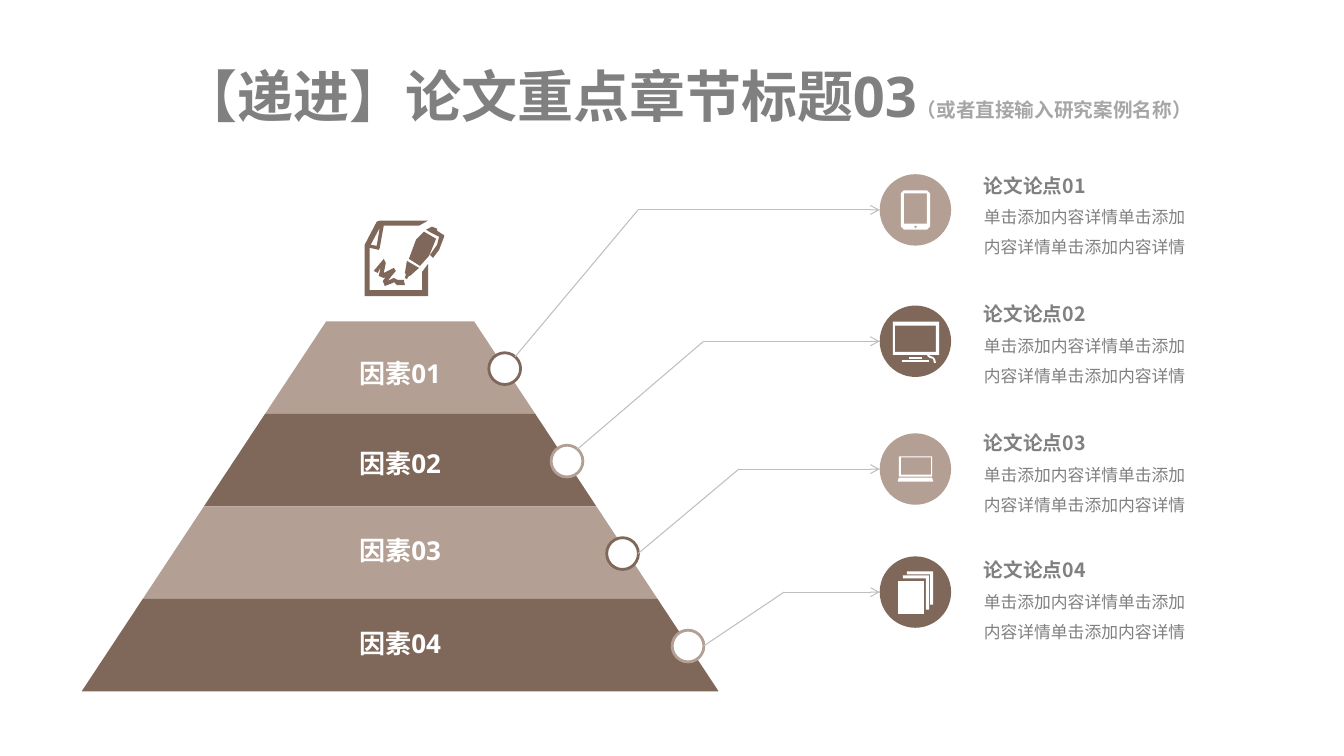
from pptx import Presentation
from pptx import util as u
from pptx.dml import color
from pptx.enum import shapes, text
from pptx.oxml import ns
from lxml import etree

Cm, Pt = u.Cm, u.Pt
COLORS = {"light": "B39F93", "dark": "7F685A", "white": "FFFFFF",
          "line": "BFBFBF", "text": "808080", "subtitle": "A6A6A6"}
LATIN, CJK = "Open Sans", "Noto Sans CJK SC"
ICON_SCALE = Cm(1.8) / 71


def rect(l, t, r, b):
    """Return the corners of a rectangular contour."""
    return [(l, t), (r, t), (r, b), (l, b)]


TABLET = [[
    [(24, 16), (47, 16), (50, 19), (50, 52), (47, 55), (24, 55), (21, 52), (21, 19)],
    rect(24, 19, 47, 49),
    [(36, 51), (37, 52), (36, 54), (34, 52)]]]
MONITOR = [
    [[(59, 49), (59, 16), (13, 16), (13, 49), (47, 49), (48, 51), (50, 52), (53, 53),
      (54, 57), (56, 57), (55, 53), (53, 51), (50, 50), (49, 49)],
     rect(15, 20, 56, 46)],
    [rect(29, 51, 42, 53)],
    [rect(22, 54, 49, 56)]]
LAPTOP = [
    [rect(19, 23, 52, 43), rect(21, 24, 51, 41)],
    [[(53, 47), (52, 44), (19, 44), (18, 47), (18, 48), (53, 48)]]]
PAPERS = [
    [[(23, 22), (46, 22), (46, 53), (49, 53), (49, 19), (23, 19)]],
    [[(27, 15), (27, 18), (50, 18), (50, 48), (53, 48), (53, 15)]],
    [rect(18, 24, 44, 57)]]
PEN_AND_PAPER = [[
    [(15, 0), (63, 0), (54, 5), (19, 5), (15, 27), (14, 29), (5, 27), (5, 69), (57, 69),
     (57, 51), (63, 43), (63, 75), (0, 75), (0, 24), (12, 1)],
    [(9, 50), (13, 52), (16, 46), (14, 55), (19, 57), (21, 56), (18, 60), (20, 65),
     (28, 62), (29, 61), (32, 64), (40, 64), (39, 59), (33, 59), (29, 57), (23, 60),
     (26, 56), (31, 50), (29, 47), (23, 50), (19, 52), (21, 42), (19, 38)],
    [(15, 7), (6, 24), (12, 25)],
    [(42, 40), (40, 52), (41, 53), (40, 57), (42, 58), (44, 55), (45, 55), (54, 47)],
    [(72, 10), (72, 8), (67, 6), (61, 9), (66, 12), (72, 15), (74, 16), (72, 24),
     (65, 34), (68, 37), (74, 29), (79, 16), (79, 14), (78, 14)],
    [(59, 11), (51, 19), (44, 38), (55, 45), (64, 35), (71, 18)]]]

LABEL_CENTERS = [9.4, 11.68, 13.87, 16.2]
LEADERS = [((12.32, 8.89), (0.66, 0.1), 16.08), ((13.89, 11.22), (0.66, 0.1), 17.73),
           ((15.29, 13.55), (0.79, 0.4), 18.62), ((16.94, 15.88), (0.79, 0.4), 19.76)]
POINTS = [(4.39, 3.96, TABLET), (7.7, 7.19, MONITOR),
          (10.92, 10.44, LAPTOP), (14.02, 13.64, PAPERS)]


def rgb(name):
    """Return a palette colour."""
    return color.RGBColor.from_string(COLORS[name])


def paint(sp, fill, line=None):
    """Give a shape a flat fill and an optional outline."""
    sp.shadow.inherit = False
    sp.fill.solid()
    sp.fill.fore_color.rgb = rgb(fill)
    if line:
        sp.line.color.rgb = rgb(line)
        sp.line.width = Pt(2)
    else:
        sp.line.fill.background()


def style_run(r, size, fill, bold=True, font=LATIN):
    """Format a run for Latin and Chinese text."""
    r.font.name, r.font.size, r.font.bold = font, Pt(size), bold
    r.font.color.rgb = rgb(fill)
    etree.SubElement(r._r.rPr, ns.qn("a:ea")).set("typeface", CJK)


def add_outline(parent, x, y, contours, scale, fill):
    """Draw closed contours as one freeform at a position in cm."""
    first, *others = contours
    fb = parent.build_freeform(*first[0], scale=scale)
    fb.add_line_segments(first[1:], close=True)
    for contour in others:
        fb.move_to(*contour[0])
        fb.add_line_segments(contour[1:], close=True)
    paint(fb.convert_to_shape(Cm(x), Cm(y)), fill)


def add_icon(s, x, y, pieces, fill):
    """Draw an icon as a group of freeforms."""
    group = s.shapes.add_group_shape()
    for contours in pieces:
        add_outline(group.shapes, x, y, contours, ICON_SCALE, fill)


def add_circle(s, x, y, size, fill, line=None):
    """Draw a circle."""
    sp = s.shapes.add_shape(shapes.MSO_SHAPE.OVAL, Cm(x), Cm(y), Cm(size), Cm(size))
    paint(sp, fill, line)


def add_line(s, x1, y1, x2, y2, arrow=False):
    """Draw a thin leader line, with an arrowhead if asked."""
    c = s.shapes.add_connector(shapes.MSO_CONNECTOR.STRAIGHT, Cm(x1), Cm(y1), Cm(x2), Cm(y2))
    c.line.color.rgb = rgb("line")
    c.line.width = Pt(0.75)
    if arrow:
        etree.SubElement(c.line._ln, ns.qn("a:tailEnd")).set("type", "arrow")
    etree.SubElement(c._element.spPr, ns.qn("a:effectLst"))


def place(sp, x, y, w, h, anchor):
    """Move a text shape and set its frame."""
    sp.left, sp.top, sp.width, sp.height = Cm(x), Cm(y), Cm(w), Cm(h)
    tf = sp.text_frame
    tf.word_wrap, tf.auto_size, tf.vertical_anchor = True, text.MSO_AUTO_SIZE.NONE, anchor
    return tf


def add_title(s, x, y, w, h):
    """Fill the title placeholder."""
    tf = place(s.shapes.title, x, y, w, h, text.MSO_ANCHOR.MIDDLE)
    p = tf.paragraphs[0]
    p.text = "【递进】论文重点章节标题03"
    p.alignment = text.PP_ALIGN.CENTER
    style_run(p.runs[0], 40, "text")
    r = p.add_run()
    r.text = "（或者直接输入研究案例名称）"
    style_run(r, 14, "subtitle")


def add_pyramid(s, x, y, w, level, step):
    """Stack four widening bands with their labels."""
    for i, center in enumerate(LABEL_CENTERS):
        left = step * (3 - i)
        right = w - left
        band = [(left + step, 0), (right - step, 0), (right, level), (left, level)]
        contour = [(round(a * 100), round(b * 100)) for a, b in band]
        add_outline(s.shapes, x, y + level * i, [contour], Cm(0.01), ("light", "dark")[i % 2])
        sp = s.shapes.add_textbox(0, 0, 0, 0)
        tf = place(sp, x + w / 2 - 3, center - 0.5, 6, 1, text.MSO_ANCHOR.MIDDLE)
        p = tf.paragraphs[0]
        p.text = f"因素{i + 1:02}"
        p.alignment = text.PP_ALIGN.CENTER
        style_run(p.runs[0], 18.6, "white")
    add_icon(s, 9.19, 5.56, PEN_AND_PAPER, "dark")


def add_leaders(s, end):
    """Link each pyramid level to its icon circle."""
    for i, ((x, y), (dx, dy), elbow) in enumerate(LEADERS):
        row = POINTS[i][0] + 0.9
        add_circle(s, x, y, 0.8, "white", ("dark", "light")[i % 2])
        add_line(s, x + dx, y + dy, elbow, row)
        add_line(s, elbow, row, end, row, arrow=True)


def add_points(s, x, w):
    """Place the icon circles and fill the body placeholders."""
    bodies = [ph for ph in s.placeholders if ph.placeholder_format.idx]
    for i, (body, (top, text_top, icon)) in enumerate(zip(bodies, POINTS)):
        add_circle(s, x, top, 1.8, ("light", "dark")[i % 2])
        add_icon(s, x, top, icon, "white")
        tf = place(body, x + 2.37, text_top, w, 2.69, text.MSO_ANCHOR.TOP)
        tf.text = f"论文论点{i + 1:02}\n单击添加内容详情单击添加\n内容详情单击添加内容详情"
        for j, p in enumerate(tf.paragraphs):
            p.line_spacing = Pt(21.5 if j else 25)
            p.space_before = Pt(0)
            pPr = p._p.get_or_add_pPr()
            pPr.set("marL", "0")
            pPr.set("indent", "0")
            etree.SubElement(pPr, ns.qn("a:buNone"))
            style_run(p.runs[0], 12 if j else 14, "text", not j, CJK)


def main():
    """Build and save the slide."""
    prs = Presentation()
    prs.slide_width, prs.slide_height = Cm(33.87), Cm(19.05)
    s = prs.slides.add_slide(prs.slide_layouts.get_by_name("Comparison"))
    add_title(s, 0.36, 1.45, 33.9, 1.88)
    add_pyramid(s, 2.06, 8.1, 16.05, 2.33, 1.54)
    add_leaders(s, 22.17)
    add_points(s, 22.17, 6.38)
    prs.save("out.pptx")


if __name__ == "__main__":
    main()
